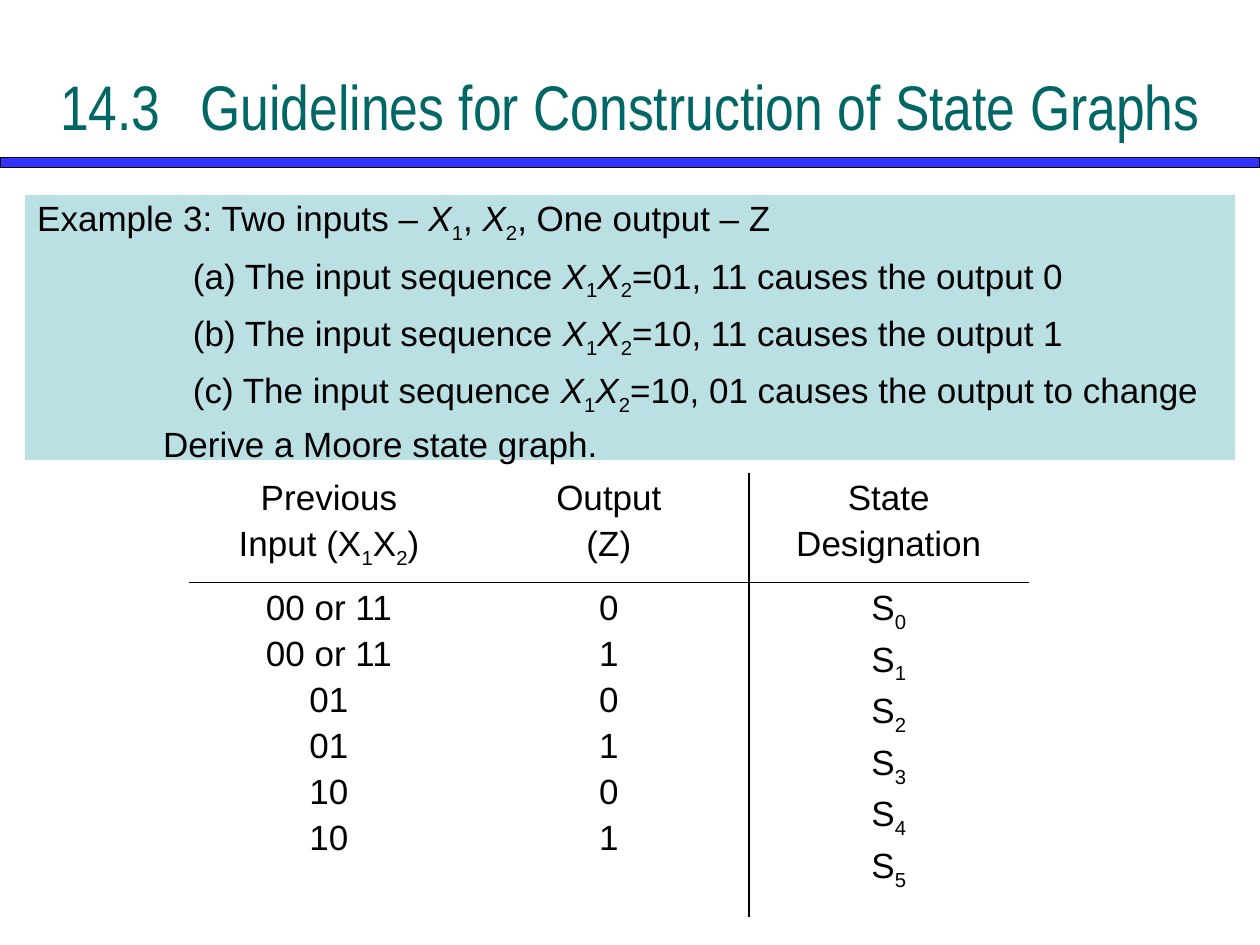
from itertools import groupby

from lxml import etree
from pptx import Presentation
from pptx.dml.color import RGBColor
from pptx.enum.shapes import MSO_SHAPE
from pptx.enum.text import MSO_ANCHOR, PP_ALIGN
from pptx.oxml.ns import qn
from pptx.util import Cm, Pt

RECT = MSO_SHAPE.RECTANGLE
LEFT, CENTER = PP_ALIGN.LEFT, PP_ALIGN.CENTER
TOP, MIDDLE = MSO_ANCHOR.TOP, MSO_ANCHOR.MIDDLE
NO_STYLE = "{2D5ABB26-0587-4C30-8999-92F81FD0307C}"

# Content: "_" makes the next character a subscript
TITLE = "14.3\t Guidelines for Construction of State Graphs"
EXAMPLE = [  # left indent in cm, text
    (0, "Example 3: Two inputs – X_1, X_2, One output – Z"),
    (3.14, "(a) The input sequence X_1X_2=01, 11 causes the output 0"),
    (3.14, "(b) The input sequence X_1X_2=10, 11 causes the output 1"),
    (3.14, "(c) The input sequence X_1X_2=10, 01 causes the output to change"),
    (2.54, "Derive a Moore state graph."),
]
HEADER = [["Previous", "Input (X_1X_2)"], ["Output", "(Z)"],
          ["State", "Designation"]]
STATES = [
    ["00 or 11", "00 or 11", "01", "01", "10", "10"],
    ["0", "1", "0", "1", "0", "1"],
    [f"S_{n}" for n in range(6)],
]

# Formats
TITLE_FONT = {"name": "Arial Narrow", "size": Pt(36)}
BODY_FONT = {"name": "Arial", "size": Pt(20)}
TITLE_PARA = {"alignment": CENTER}
EXAMPLE_PARA = {"alignment": LEFT, "line_spacing": 0.8, "space_before": Pt(11)}
CELL_PARA = {"alignment": CENTER, "space_before": Pt(4)}


def rgb(value):
    return RGBColor.from_string(value)


def apply(target, formats):
    for name, value in formats.items():
        setattr(target, name, value)


def split_runs(text, italic_x):
    """Yield (kind, text) for plain, italic and subscript stretches."""
    marked = []
    for before, char in zip(" " + text, text):
        if char != "_":
            kind = ("sub" if before == "_" else
                    "italic" if italic_x and char == "X" else "plain")
            marked.append((kind, char))
    for kind, group in groupby(marked, key=lambda item: item[0]):
        yield kind, "".join(char for _, char in group)


def write(tf, lines, para, font, color="000000", italic_x=False):
    for i, (indent, text) in enumerate(lines):
        p = tf.add_paragraph() if i else tf.paragraphs[0]
        apply(p, para)
        if indent:
            p._p.get_or_add_pPr().set("marL", str(Cm(indent)))
        for kind, part in split_runs(text, italic_x):
            r = p.add_run()
            r.text = part
            apply(r.font, font)
            r.font.color.rgb = rgb(color)
            if kind == "italic":
                r.font.italic = True
            if kind == "sub":
                r.font._element.set("baseline", "-25000")


def add_rect(shapes, box, fill):
    sp = shapes.add_shape(RECT, *map(Cm, box))
    sp.shadow.inherit = False
    sp.fill.solid()
    sp.fill.fore_color.rgb = rgb(fill)
    sp.line.fill.background()
    return sp


def add_border(cell, side):
    ln = etree.SubElement(cell._tc.get_or_add_tcPr(), qn(f"a:ln{side}"),
                          w=str(Pt(1)))
    fill = etree.SubElement(ln, qn("a:solidFill"))
    etree.SubElement(fill, qn("a:srgbClr"), val="000000")


def main():
    prs = Presentation()
    prs.slide_width, prs.slide_height = Cm(25.4), Cm(19.05)
    s = prs.slides.add_slide(prs.slide_layouts[6])

    # Rule under the title
    rule = add_rect(s.shapes, (0, 3.17, 25.4, 0.21), "3333FF")
    rule.line.color.rgb = rgb("000000")
    rule.line.width = Pt(0.75)

    # Title
    tf = s.shapes.add_textbox(*map(Cm, (0.5, 0.53, 24.4, 3.18))).text_frame
    apply(tf, {"word_wrap": True, "vertical_anchor": MIDDLE})
    write(tf, [(0, TITLE)], TITLE_PARA, TITLE_FONT, "006666")

    # Example panel
    tf = add_rect(s.shapes, (0.5, 3.93, 24.4, 5.34), "BBE0E3").text_frame
    apply(tf, {"word_wrap": True, "vertical_anchor": TOP})
    write(tf, EXAMPLE, EXAMPLE_PARA, BODY_FONT, italic_x=True)

    # State table: a line under the header and one before the last column
    frame = s.shapes.add_table(2, 3, *map(Cm, (3.81, 9.53, 16.93, 8.38)))
    table = frame.table
    apply(table, {"first_row": False, "horz_banding": False})
    table._tbl.tblPr.find(qn("a:tableStyleId")).text = NO_STYLE
    for row, height in zip(table.rows, (2.21, 6.17)):
        row.height = Cm(height)
    for y, cells in enumerate((HEADER, STATES)):
        for x, lines in enumerate(cells):
            cell = table.cell(y, x)
            write(cell.text_frame, [(0, line) for line in lines],
                  CELL_PARA, BODY_FONT)
            if x > 0:
                if x == 2:
                    add_border(cell, "L")
                else:
                    add_border(cell, "R")
            add_border(cell, "T" if y else "B")
            cell.fill.background()

    prs.save("out.pptx")


if __name__ == "__main__":
    main()
